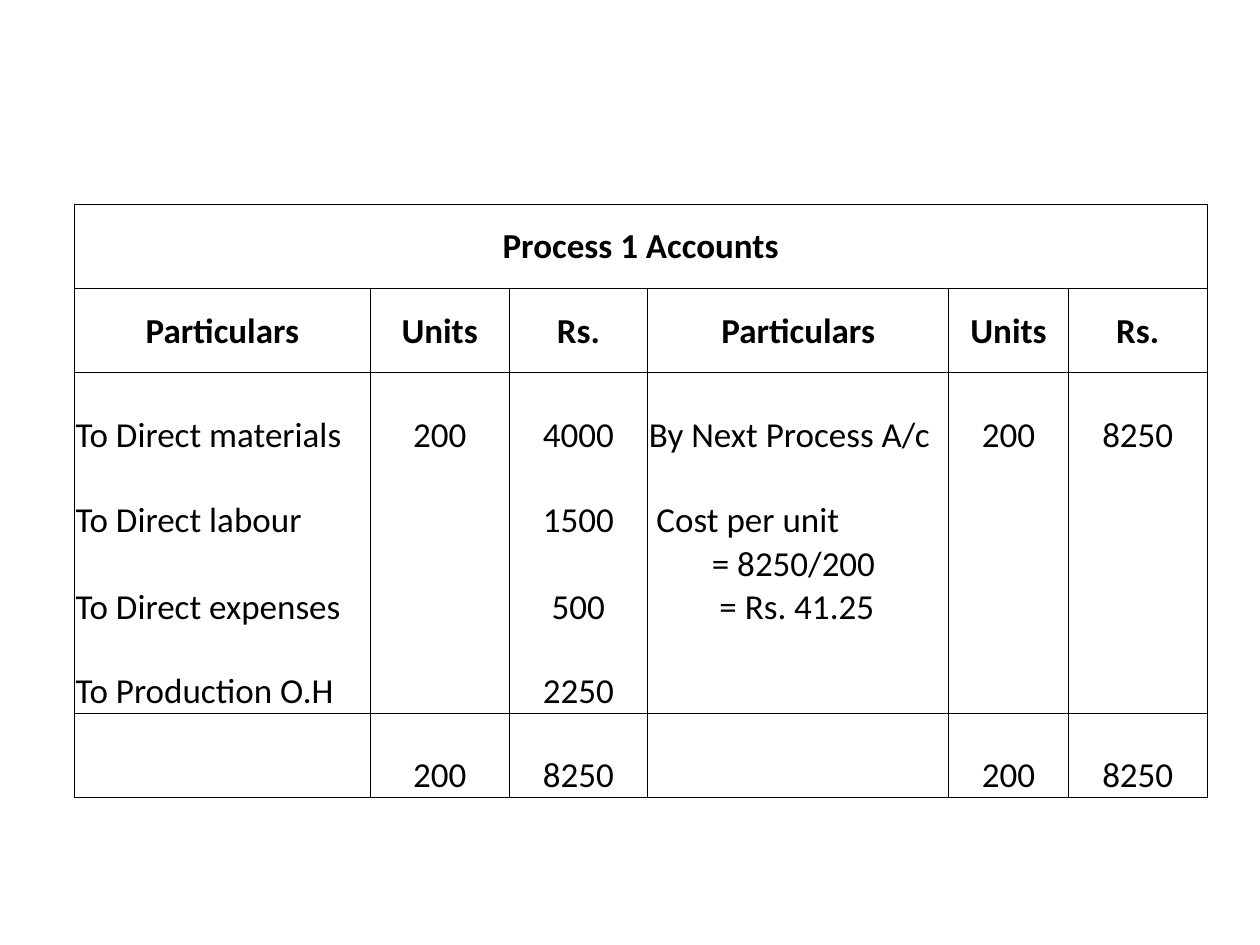
from dataclasses import dataclass

from lxml import etree
from pptx import Presentation
from pptx import util as u
from pptx.dml.color import RGBColor
from pptx.enum import text
from pptx.oxml import ns

BLACK = RGBColor(0, 0, 0)
FONT = {"name": "Calibri", "size": u.Pt(20)}
INSETS = {"margin_left": 0.01, "margin_right": 0.01, "margin_top": 0.01, "margin_bottom": 0}
COL_WIDTHS = [2.35, 1.1, 1.1, 2.39, 0.95, 1.1]
LABEL_COLS = {0, 3}
ROW_HEIGHT = 0.67
RULE_WIDTH = u.Pt(0.5)


@dataclass(frozen=True)
class Line:
    words: str
    indent: float = 0


@dataclass(frozen=True)
class Row:
    cells: list
    heading: bool = False
    rule_above: bool = False
    rule_below: bool = False


COST = [Line("= 8250/200", 0.5), Line("= Rs. 41.25", 0.56)]
ROWS = [
    Row(["Process 1 Accounts", "", "", "", "", ""], True, True, True),
    Row(["Particulars", "Units", "Rs."] * 2, True, True, True),
    Row(["To Direct materials", "200", "4000", "By Next Process A/c", "200", "8250"],
        rule_above=True),
    Row(["To Direct labour", "", "1500", [Line("Cost per unit", 0.06)], "", ""]),
    Row(["To Direct expenses", "", "500", COST, "", ""]),
    Row(["To Production O.H", "", "2250", "", "", ""], rule_below=True),
    Row(["", "200", "8250"] * 2, rule_above=True, rule_below=True),
]


def set_borders(cell, row: Row) -> None:
    tc_pr = cell._tc.get_or_add_tcPr()
    sides = {"lnL": True, "lnR": True, "lnT": row.rule_above, "lnB": row.rule_below}
    for i, (tag, shown) in enumerate(sides.items()):
        ln = etree.Element(ns.qn(f"a:{tag}"), w=str(int(RULE_WIDTH)))
        if shown:
            fill = etree.SubElement(ln, ns.qn("a:solidFill"))
            etree.SubElement(fill, ns.qn("a:srgbClr"), val=str(BLACK))
        else:
            etree.SubElement(ln, ns.qn("a:noFill"))
        tc_pr.insert(i, ln)


def write_lines(cell, lines: list, align, bold: bool) -> None:
    tf = cell.text_frame
    for i, line in enumerate(lines):
        p = tf.add_paragraph() if i else tf.paragraphs[0]
        p.alignment = align
        if line.indent:
            p._p.get_or_add_pPr().set("marL", str(int(u.Inches(line.indent))))
        r = p.add_run()
        r.text = line.words
        for key, value in {**FONT, "bold": bold}.items():
            setattr(r.font, key, value)
        r.font.color.rgb = BLACK


def fill_cell(cell, content, row: Row, col: int) -> None:
    cell.fill.background()
    for key, value in INSETS.items():
        setattr(cell, key, u.Inches(value))
    cell.vertical_anchor = text.MSO_ANCHOR.MIDDLE if row.heading else text.MSO_ANCHOR.BOTTOM
    set_borders(cell, row)
    if content:
        lines = [Line(content)] if isinstance(content, str) else content
        left = col in LABEL_COLS and not row.heading
        align = text.PP_ALIGN.LEFT if left else text.PP_ALIGN.CENTER
        write_lines(cell, lines, align, row.heading)


def add_account(s) -> None:
    table = s.shapes.add_table(
        len(ROWS), len(COL_WIDTHS), u.Inches(0.59), u.Inches(1.62),
        u.Inches(sum(COL_WIDTHS)), u.Inches(ROW_HEIGHT * len(ROWS))).table
    table.first_row = table.horz_banding = False
    for col, width in zip(table.columns, COL_WIDTHS):
        col.width = u.Inches(width)
    for i, row in enumerate(ROWS):
        table.rows[i].height = u.Inches(ROW_HEIGHT)
        for j, content in enumerate(row.cells):
            fill_cell(table.cell(i, j), content, row, j)
    table.cell(0, 0).merge(table.cell(0, len(COL_WIDTHS) - 1))


def main() -> None:
    prs = Presentation()
    prs.slide_width, prs.slide_height = u.Inches(10), u.Inches(7.5)
    s = prs.slides.add_slide(prs.slide_layouts[6])
    add_account(s)
    prs.save("out.pptx")


if __name__ == "__main__":
    main()
